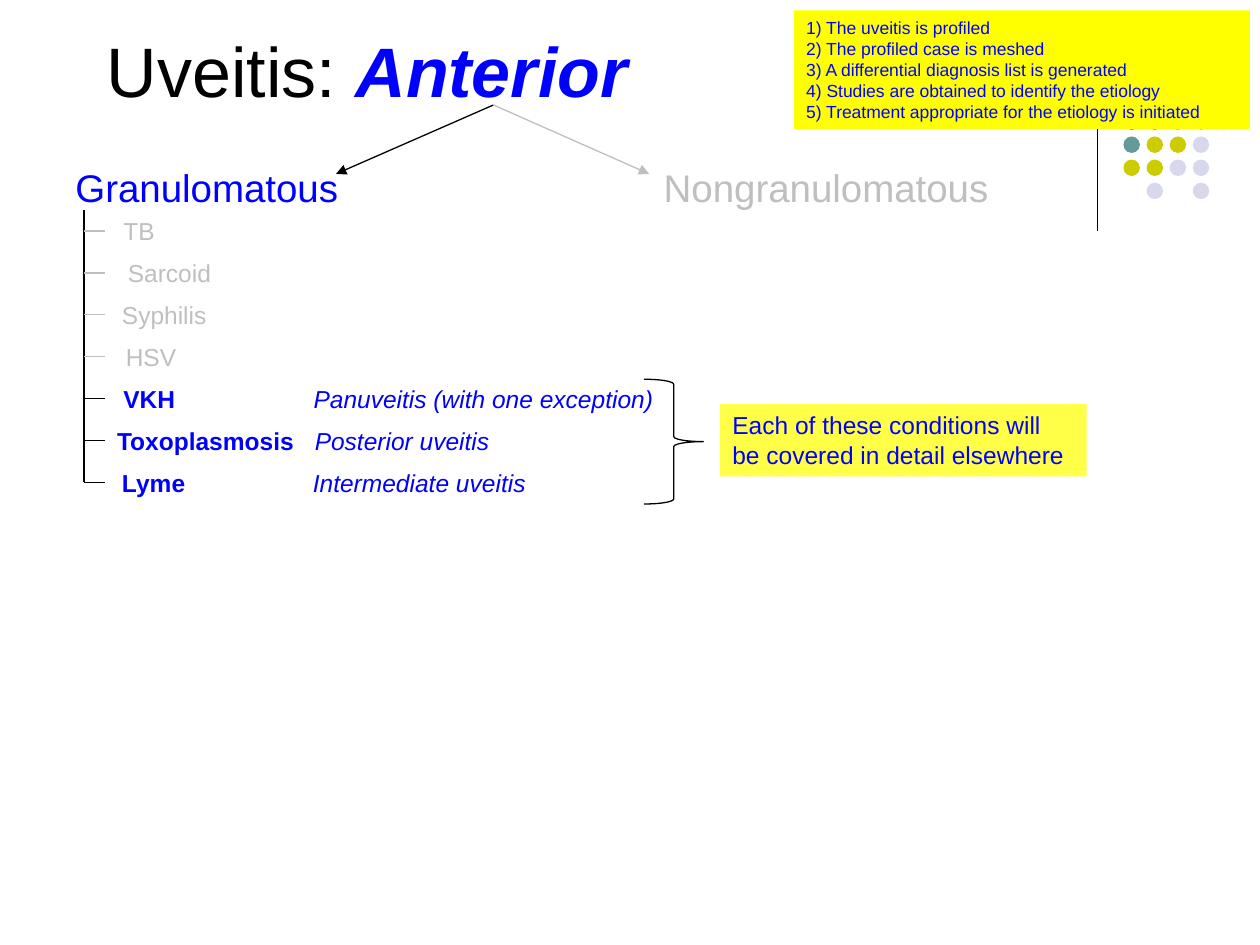
from lxml import etree
from pptx import Presentation
from pptx import util as u
from pptx.dml import color
from pptx.enum import shapes, text
from pptx.oxml import ns

BLACK, BLUE, GREY = "000000", "0000FF", "BFBFBF"
TEAL, OLIVE, LILAC = "669999", "CCCC00", "D8D8EC"


def rgb(value):
    return color.RGBColor.from_string(value)


class Deck:
    """Holds the shared style and the slide being drawn."""

    font = "Arial"
    line_width = 0.75

    def __init__(self, width, height):
        self.prs = Presentation()
        self.prs.slide_width, self.prs.slide_height = u.Pt(width), u.Pt(height)
        self.slide = self.prs.slides.add_slide(self.prs.slide_layouts[6])

    def fill_text(self, frame, paragraphs, size, wrap):
        layout = {
            "word_wrap": wrap,
            "auto_size": text.MSO_AUTO_SIZE.SHAPE_TO_FIT_TEXT,
            "vertical_anchor": text.MSO_ANCHOR.TOP,
        }
        for name, value in layout.items():
            setattr(frame, name, value)
        for index, runs in enumerate(paragraphs):
            paragraph = frame.add_paragraph() if index else frame.paragraphs[0]
            paragraph.alignment = text.PP_ALIGN.LEFT
            for words, ink, style in runs:
                run = paragraph.add_run()
                run.text = words
                run.font.color.rgb = rgb(ink)
                for name, value in {"name": self.font, "size": u.Pt(size), **style}.items():
                    setattr(run.font, name, value)

    def label(self, box, runs, size):
        frame = self.slide.shapes.add_textbox(*map(u.Pt, box)).text_frame
        self.fill_text(frame, [runs], size, False)

    def shape(self, kind, box, fill=None, line=None):
        shape = self.slide.shapes.add_shape(kind, *map(u.Pt, box))
        shape.shadow.inherit = False
        if fill:
            shape.fill.solid()
            shape.fill.fore_color.rgb = rgb(fill)
        else:
            shape.fill.background()
        if line:
            shape.line.color.rgb = rgb(line)
            shape.line.width = u.Pt(self.line_width)
        else:
            shape.line.fill.background()
        return shape

    def note(self, box, fill, lines, size):
        panel = self.shape(shapes.MSO_SHAPE.RECTANGLE, box, fill)
        self.fill_text(panel.text_frame, [[(line, BLUE, {})] for line in lines], size, True)

    def line(self, start, end, ink, arrow=False):
        line = self.slide.shapes.add_connector(
            shapes.MSO_CONNECTOR.STRAIGHT, *map(u.Pt, (*start, *end)))
        line.line.color.rgb = rgb(ink)
        line.line.width = u.Pt(self.line_width)
        properties = line.element.spPr
        if arrow:
            etree.SubElement(properties.find(ns.qn("a:ln")), ns.qn("a:tailEnd"), type="triangle")
        etree.SubElement(properties, ns.qn("a:effectLst"))


def draw_dots(deck):
    rows = [
        [TEAL, TEAL, OLIVE, OLIVE, LILAC],
        [TEAL, OLIVE, OLIVE, LILAC],
        [OLIVE, OLIVE, LILAC, LILAC],
        [None, LILAC, None, LILAC],
    ]
    for row, fills in enumerate(rows):
        for column, fill in enumerate(fills):
            if fill:
                box = (642 + 13.2 * column, 64.8 + 13.2 * row, 9.4, 9.4)
                deck.shape(shapes.MSO_SHAPE.OVAL, box, fill)


def draw_causes(deck):
    faded, strong = (GREY, {}), (BLUE, {"bold": True})
    causes = [
        ("TB", 63.4, 32.4, faded),
        ("Sarcoid", 66, 62.6, faded),
        ("Syphilis", 62.6, 63.4, faded),
        ("HSV", 64.8, 43.9, faded),
        ("VKH", 63.4, 44.6, strong),
        ("Toxoplasmosis", 59.8, 115.9, strong),
        ("Lyme", 62.6, 51.1, strong),
    ]
    sites = {
        "VKH": ("Panuveitis (with one exception)", 172.1, 209.5),
        "Toxoplasmosis": ("Posterior uveitis", 172.8, 115.2),
        "Lyme": ("Intermediate uveitis", 171.7, 136.8),
    }
    trunk, top, step = 48, 120, 23.94
    deck.line((trunk, top), (trunk, top + 12 + 6 * step), BLACK)
    for index, (cause, left, width, (ink, style)) in enumerate(causes):
        y = top + step * index
        deck.line((trunk, y + 12), (60, y + 12), GREY if ink == GREY else BLACK)
        deck.label((left, y, width, 24.5), [(cause, ink, style)], 14)
        if cause in sites:
            site, site_left, site_width = sites[cause]
            deck.label((site_left, y + 0.3, site_width, 24.5), [(site, BLUE, {"italic": True})], 14)


def main():
    deck = Deck(720, 540)
    deck.line((627, 12), (627, 132), BLACK)
    draw_dots(deck)
    deck.label((54, 12, 315.4, 55.4), [
        ("Uveitis: ", BLACK, {}),
        ("Anterior", BLUE, {"bold": True, "italic": True}),
    ], 40)
    deck.note((453.6, 6, 260.6, 67.7), "FFFF00", [
        "1) The uveitis is profiled",
        "2) The profiled case is meshed",
        "3) A differential diagnosis list is generated",
        "4) Studies are obtained to identify the etiology",
        "5) Treatment appropriate for the etiology is initiated",
    ], 10)
    fork = (282, 60)
    branches = [
        ("Granulomatous", 36, 166.3, 192, BLACK, BLUE),
        ("Nongranulomatous", 372.2, 202.3, 371, GREY, GREY),
    ]
    for branch, left, width, tip, arrow_ink, ink in branches:
        deck.label((left, 90, width, 33.8), [(branch, ink, {})], 22)
        deck.line(fork, (tip, 99.4), arrow_ink, arrow=True)
    draw_causes(deck)
    deck.shape(shapes.MSO_SHAPE.RIGHT_BRACE, (368, 216.7, 34, 71.3), line=BLACK)
    deck.note((411.4, 231, 209.5, 41.2), "FFFF47",
              ["Each of these conditions will be covered in detail elsewhere"], 14)
    deck.prs.save("out.pptx")


if __name__ == "__main__":
    main()
